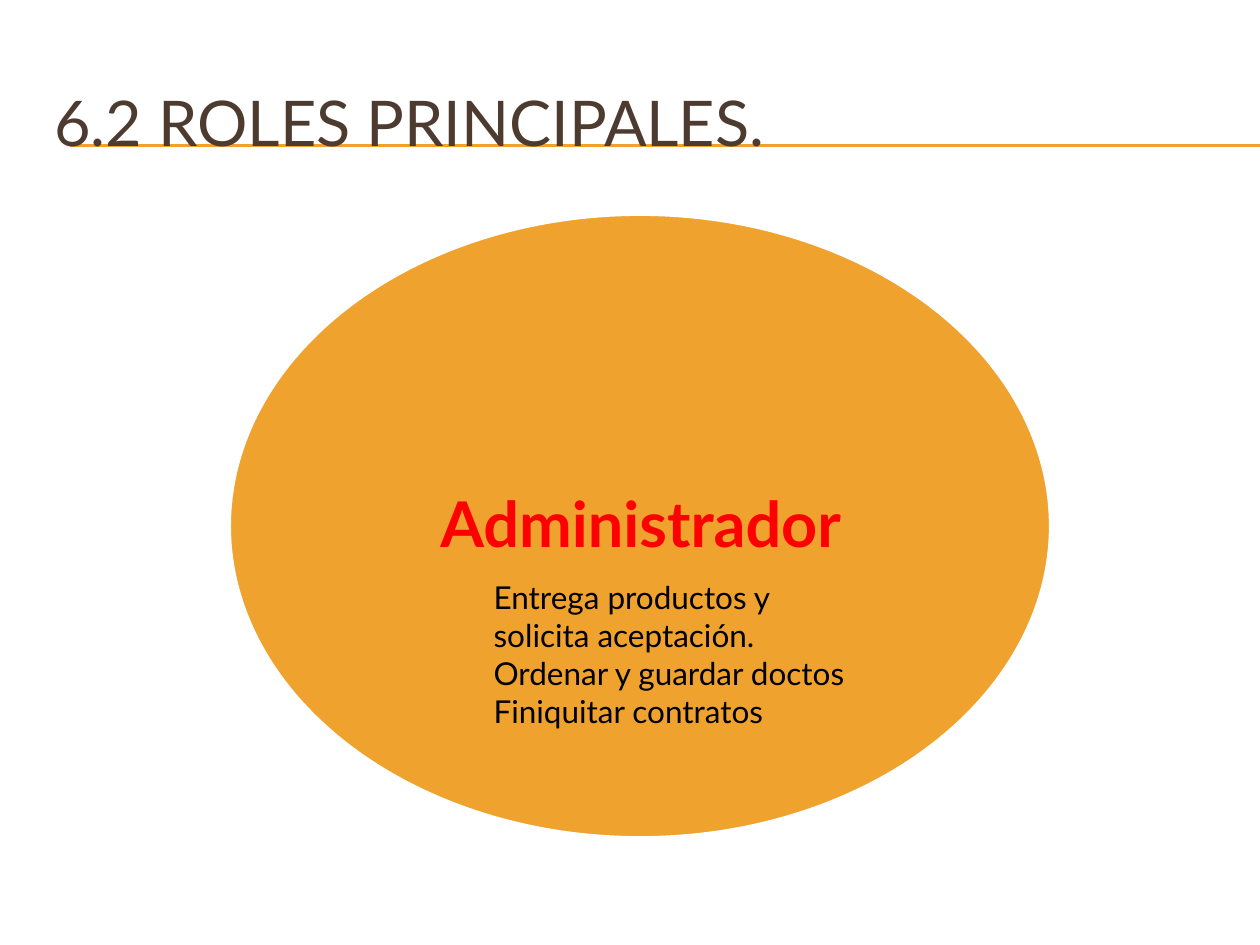
from dataclasses import dataclass
from lxml import etree
from pptx import Presentation
from pptx.dml.color import RGBColor
from pptx.enum.shapes import MSO_CONNECTOR, MSO_SHAPE
from pptx.enum.text import MSO_ANCHOR, MSO_AUTO_SIZE, PP_ALIGN
from pptx.oxml.ns import qn
from pptx.util import Pt

STRAIGHT = MSO_CONNECTOR.STRAIGHT
OVAL = MSO_SHAPE.OVAL
MIDDLE, TOP = MSO_ANCHOR.MIDDLE, MSO_ANCHOR.TOP
LEFT, CENTER = PP_ALIGN.LEFT, PP_ALIGN.CENTER
NO_FIT, GROW = MSO_AUTO_SIZE.NONE, MSO_AUTO_SIZE.SHAPE_TO_FIT_TEXT


@dataclass(frozen=True)
class Theme:
    font: str = "Lato"
    amber: RGBColor = RGBColor(0xF0, 0xA2, 0x2E)
    brown: RGBColor = RGBColor(0x4E, 0x3B, 0x30)
    red: RGBColor = RGBColor(0xFF, 0x00, 0x00)
    black: RGBColor = RGBColor(0x00, 0x00, 0x00)
    white: RGBColor = RGBColor(0xFF, 0xFF, 0xFF)
    heading: int = 36
    body: int = 18


theme = Theme()


def write(shape, lines, size, color, bold, align, frame_format, paragraph_format):
    frame = shape.text_frame
    frame.text = "\n".join(lines)
    for name, value in frame_format.items():
        setattr(frame, name, value)
    for paragraph in frame.paragraphs:
        for name, value in {"alignment": align, **paragraph_format}.items():
            setattr(paragraph, name, value)
        for name, value in {"name": theme.font, "size": Pt(size), "bold": bold}.items():
            setattr(paragraph.font, name, value)
        paragraph.font.color.rgb = color


prs = Presentation()
prs.slide_width, prs.slide_height = Pt(720), Pt(540)
slide = prs.slides.add_slide(prs.slide_layouts[5])
shapes = slide.shapes

for y in (82.8, 83.5):
    rule = shapes.add_connector(STRAIGHT, Pt(40.3), Pt(y), Pt(720), Pt(y))
    rule.line.color.rgb = theme.amber
    rule.line.width = Pt(0.75)
    etree.SubElement(rule.element.spPr, qn("a:effectLst"))

title = shapes.title
title.left, title.top, title.width, title.height = Pt(23.8), Pt(36), Pt(684), Pt(66.2)
write(title, ["6.2 ROLES PRINCIPALES."], theme.heading, theme.brown, False, LEFT,
      {"vertical_anchor": MIDDLE, "auto_size": NO_FIT, "word_wrap": True}, {})
title.element.getparent().append(title.element)

role_oval = shapes.add_shape(OVAL, Pt(131), Pt(122.4), Pt(469.4), Pt(356.4))
role_oval.shadow.inherit = False
role_oval.fill.solid()
role_oval.fill.fore_color.rgb = theme.amber
role_oval.line.color.rgb = theme.white
role_oval.line.width = Pt(2)

role_name = shapes.add_textbox(Pt(200.2), Pt(175), Pt(331.9), Pt(252))
insets = {f"margin_{side}": Pt(3.6) for side in ("left", "top", "right", "bottom")}
write(role_name, ["Administrador"], theme.heading, theme.red, True, CENTER,
      {"vertical_anchor": MIDDLE, "auto_size": NO_FIT, "word_wrap": True, **insets},
      {"line_spacing": 0.9, "space_after": Pt(12.6)})

duties = shapes.add_textbox(Pt(275), Pt(326.9), Pt(226.8), Pt(94.3))
write(duties,
      ["Entrega productos y solicita aceptación.", "Ordenar y guardar doctos", "Finiquitar contratos"],
      theme.body, theme.black, False, LEFT,
      {"vertical_anchor": TOP, "auto_size": GROW, "word_wrap": True}, {})

prs.save("out.pptx")
